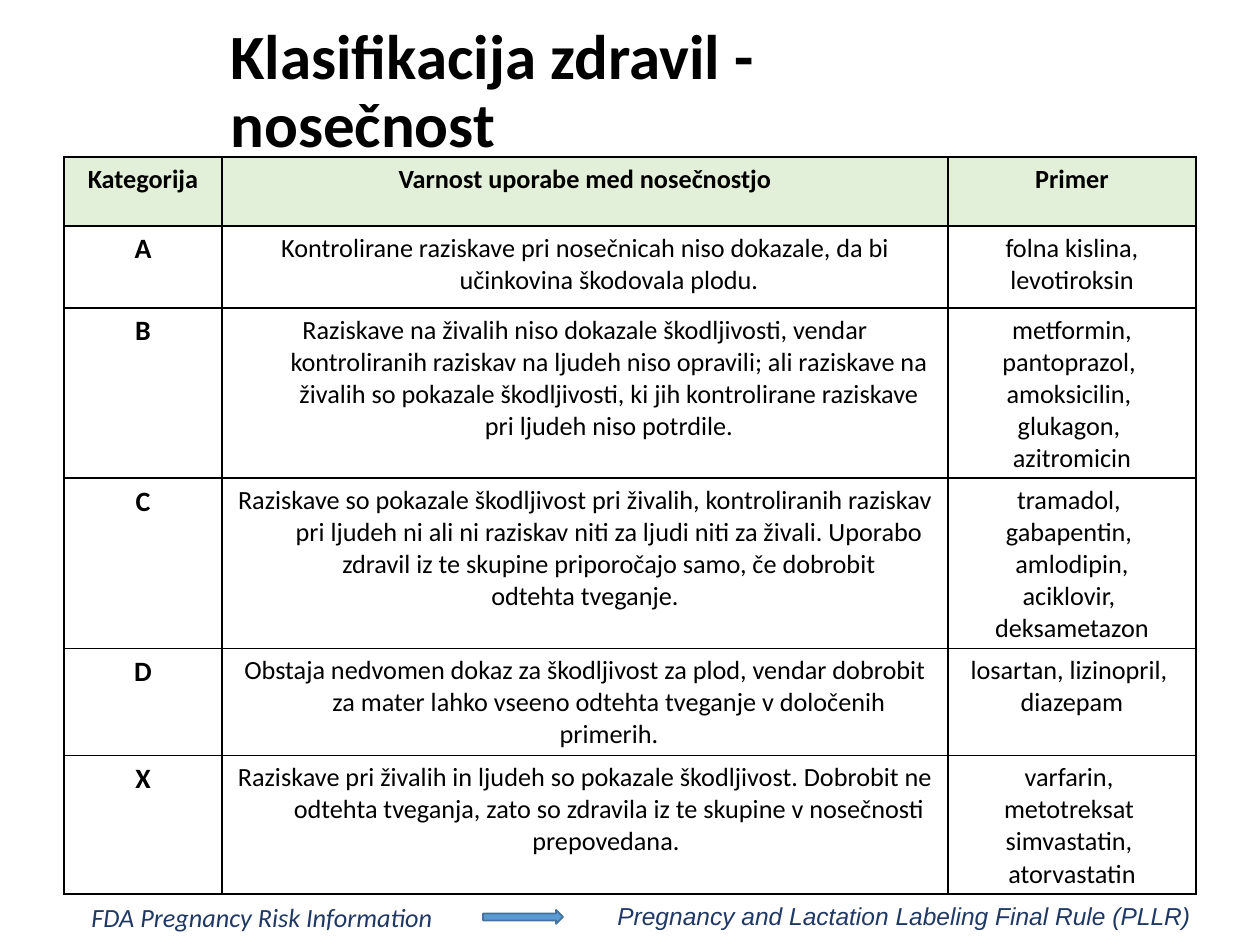
from lxml import etree
from pptx import Presentation
from pptx import util as u
from pptx.dml.color import RGBColor
from pptx.enum import shapes, text
from pptx.oxml.ns import qn

PX = 914400 / 126
COLORS = {
    "black": "000000",
    "header": "E2F0D9",
    "white": "FFFFFF",
    "navy": "203864",
    "arrow": "5B9BD5",
    "arrow_line": "43739E",
}

COLUMN_WIDTHS = [158, 726, 248]
ROW_HEIGHTS = [69, 82, 166, 166, 105, 136]
HEADERS = ["Kategorija", "Varnost uporabe med nosečnostjo", "Primer"]
# Category, safety paragraphs, example paragraphs
CATEGORIES = [
    ("A",
     ["Kontrolirane raziskave pri nosečnicah niso dokazale, da bi učinkovina škodovala plodu."],
     ["folna kislina,", "levotiroksin"]),
    ("B",
     ["Raziskave na živalih niso dokazale škodljivosti, vendar kontroliranih raziskav na ljudeh "
      "niso opravili; ali raziskave na živalih so pokazale škodljivosti, ki jih kontrolirane "
      "raziskave pri ljudeh niso potrdile."],
     ["metformin,", "pantoprazol, ", "amoksicilin, ", "glukagon, ", "azitromicin"]),
    ("C",
     ["Raziskave so pokazale škodljivost pri živalih, kontroliranih raziskav pri ljudeh ni ali ni "
      "raziskav niti za ljudi niti za živali. Uporabo zdravil iz te skupine priporočajo samo, "
      "če dobrobit",
      "odtehta tveganje."],
     ["tramadol, ", "gabapentin, ", "amlodipin,", "aciklovir, ", "deksametazon"]),
    ("D",
     ["Obstaja nedvomen dokaz za škodljivost za plod, vendar dobrobit za mater lahko vseeno "
      "odtehta tveganje v določenih primerih."],
     ["losartan, lizinopril, ", "diazepam"]),
    ("X",
     ["Raziskave pri živalih in ljudeh so pokazale škodljivost. Dobrobit ne odtehta tveganja, "
      "zato so zdravila iz te skupine v nosečnosti prepovedana. "],
     ["varfarin, ", "metotreksat ", "simvastatin, ", "atorvastatin"]),
]


def px(length):
    return u.Emu(round(length * PX))


def rgb(name):
    return RGBColor.from_string(COLORS[name])


def add_run(paragraph, words, size, color="black", font="Calibri", bold=False, italic=False):
    run = paragraph.add_run()
    run.text = words
    run.font.name, run.font.size = font, u.Pt(size)
    run.font.bold, run.font.italic = bold, italic
    run.font.color.rgb = rgb(color)


def add_text(slide, box, words, size, anchor=text.MSO_ANCHOR.TOP, line_spacing=None, **style):
    frame = slide.shapes.add_textbox(*map(px, box)).text_frame
    frame.word_wrap = True
    frame.vertical_anchor = anchor
    paragraph = frame.paragraphs[0]
    paragraph.line_spacing = line_spacing
    add_run(paragraph, words, size, **style)


def set_borders(cell):
    properties = cell._tc.get_or_add_tcPr()
    for position, side in enumerate(("lnL", "lnR", "lnT", "lnB")):
        line = etree.Element(qn(f"a:{side}"), w=str(u.Pt(1)))
        fill = etree.SubElement(line, qn("a:solidFill"))
        etree.SubElement(fill, qn("a:srgbClr"), val=COLORS["black"])
        properties.insert(position, line)


def fill_cell(cell, lines, size, bold, fill):
    """Write centred paragraphs with a hanging indent, then fill and frame the cell."""
    for index, words in enumerate(lines):
        frame = cell.text_frame
        paragraph = frame.add_paragraph() if index else frame.paragraphs[0]
        paragraph.alignment = text.PP_ALIGN.CENTER
        properties = paragraph._p.get_or_add_pPr()
        properties.set("marL", str(px(48)))
        properties.set("indent", str(-px(48)))
        add_run(paragraph, words, size, bold=bold)
    if fill:
        cell.fill.solid()
        cell.fill.fore_color.rgb = rgb(fill)
    else:
        cell.fill.background()
    set_borders(cell)


def add_category_table(slide, left, top):
    table = slide.shapes.add_table(
        len(ROW_HEIGHTS), len(COLUMN_WIDTHS), px(left), px(top),
        px(sum(COLUMN_WIDTHS)), px(sum(ROW_HEIGHTS))).table
    table.horz_banding = False
    for column, width in zip(table.columns, COLUMN_WIDTHS):
        column.width = px(width)
    for row, height in zip(table.rows, ROW_HEIGHTS):
        row.height = px(height)

    for column, header in enumerate(HEADERS):
        fill_cell(table.cell(0, column), [header], 15, True, "header")
    for row, (category, safety, examples) in enumerate(CATEGORIES, start=1):
        fill = "white" if category in "BCD" else None
        fill_cell(table.cell(row, 0), [category], 16, True, fill)
        fill_cell(table.cell(row, 1), safety, 15, False, fill)
        fill_cell(table.cell(row, 2), examples, 15, False, fill)


def add_footer(slide, left, top):
    """Old labelling rule, an arrow, and the rule that replaces it."""
    add_text(slide, (left, top, 369, 44), "FDA Pregnancy Risk Information", 15,
             color="navy", italic=True)
    add_text(slide, (left + 526, top, 630, 43),
             "Pregnancy and Lactation Labeling Final Rule (PLLR)\u00a0", 14,
             color="navy", font="Arial", italic=True)
    arrow = slide.shapes.add_shape(shapes.MSO_SHAPE.RIGHT_ARROW,
                                   *map(px, (left + 404, top + 15, 80, 14)))
    arrow.shadow.inherit = False
    arrow.fill.solid()
    arrow.fill.fore_color.rgb = rgb("arrow")
    arrow.line.color.rgb = rgb("arrow_line")
    arrow.line.width = u.Pt(1)


def main():
    presentation = Presentation()
    presentation.slide_width, presentation.slide_height = px(1260), px(945)
    slide = presentation.slides.add_slide(presentation.slide_layouts[6])
    add_text(slide, (218, 28, 825, 130), "Klasifikacija zdravil - nosečnost", 36,
             anchor=text.MSO_ANCHOR.MIDDLE, line_spacing=0.9, bold=True)
    add_category_table(slide, 64, 157)
    add_footer(slide, 79, 895)
    presentation.save("out.pptx")


if __name__ == "__main__":
    main()
